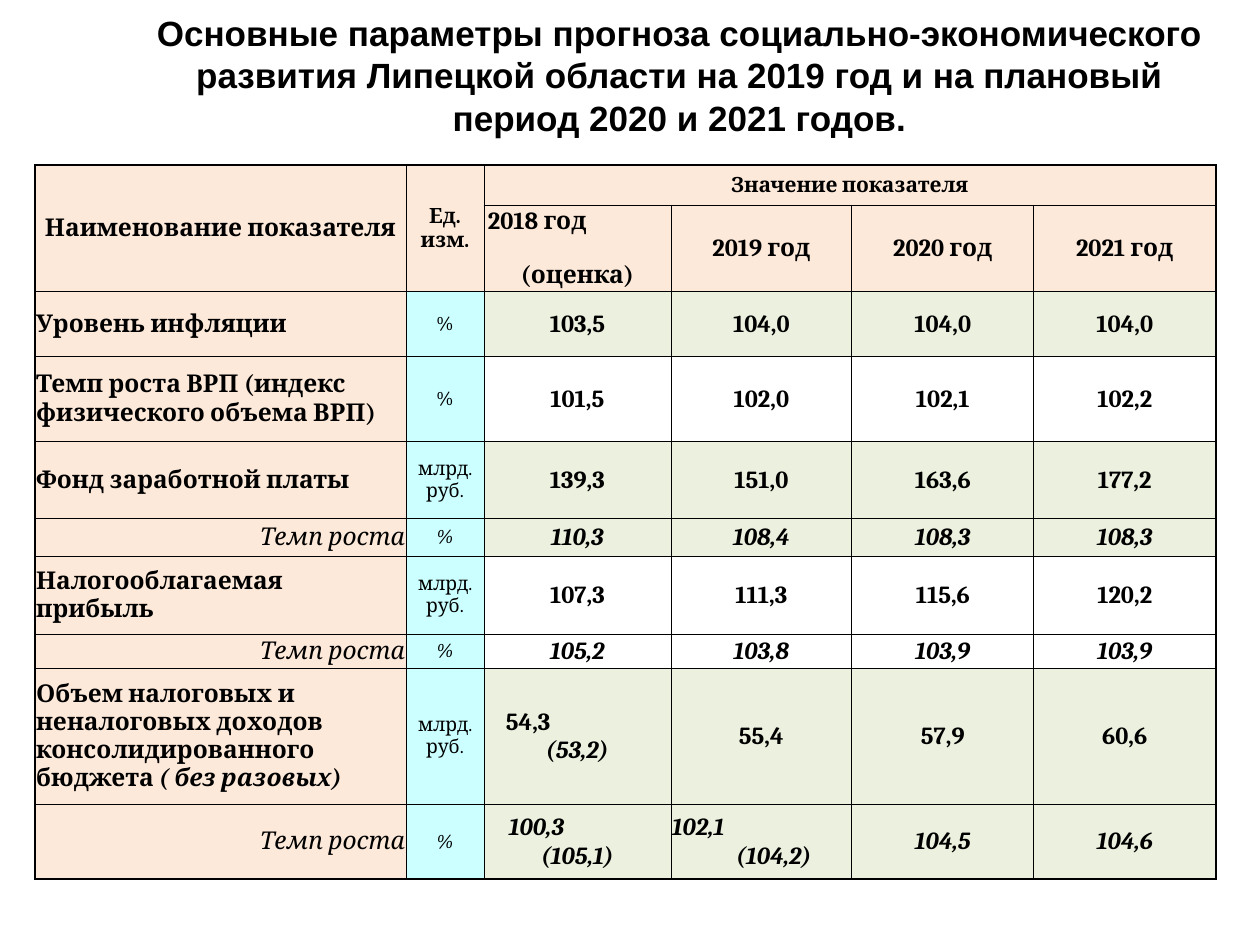
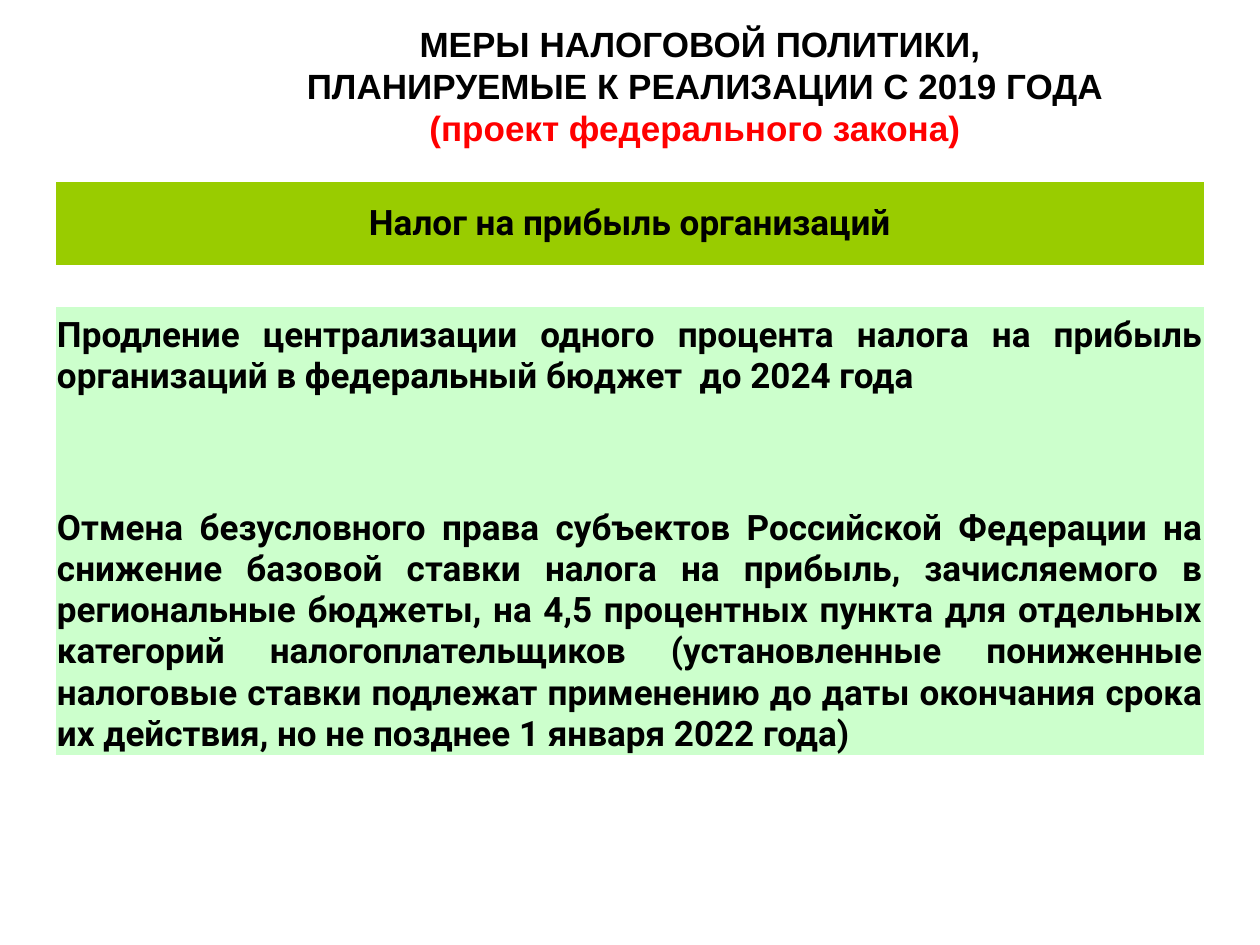
import pptx
import pptx.util
import pptx.dml.color
import pptx.enum.text
import pptx.oxml
import pptx.oxml.ns

PX = 914400 // 126
ALIGN = pptx.enum.text.PP_ALIGN
ANCHOR = pptx.enum.text.MSO_ANCHOR
BARE = "{2D5ABB26-0587-4C30-8999-92F81FD0307C}"
HUES = {"ink": "000000", "red": "FF0000", "peach": "FDE9D9", "cyan": "CCFFFF",
        "sage": "EBF1DE", "white": "FFFFFF", "lime": "99CC00", "mint": "CCFFCC"}


def tint(name):
    return pptx.dml.color.RGBColor.from_string(HUES[name])


def write(frame, text, size=14, font="Cambria", bold=True, ital=False, hue="ink",
          align=ALIGN.CENTER, left=0, right=0, before=0, join=False):
    """Add a paragraph, or with join a run in the last one; left and right are px."""
    para = frame.paragraphs[-1]
    if not join:
        if para.runs:
            para = frame.add_paragraph()
        para.alignment = align
        para.space_before = pptx.util.Pt(before)
        props = para._p.get_or_add_pPr()
        props.set("marL", str(left * PX))
        props.set("marR", str(right * PX))
        props.set("indent", "0")
    run = para.add_run()
    run.text = text
    run.font.size = pptx.util.Pt(size)
    run.font.name = font
    run.font.bold = bold
    run.font.italic = ital
    run.font.color.rgb = tint(hue)


class Deck:
    """Holds the shared style and the slide being built."""

    def __init__(self):
        self.file = pptx.Presentation()
        self.file.slide_width = pptx.util.Inches(10)
        self.file.slide_height = pptx.util.Inches(7.5)

    def page(self):
        self.slide = self.file.slides.add_slide(self.file.slide_layouts[6])

    def title(self, box, *lines):
        """Each line is a text and its format."""
        shape = self.slide.shapes.add_textbox(*(n * PX for n in box))
        frame = shape.text_frame
        frame.word_wrap = True
        frame.vertical_anchor = ANCHOR.MIDDLE
        for text, form in lines:
            write(frame, text, size=20, font="Arial", **form)

    def table(self, left, top, cols, rows):
        frame = self.slide.shapes.add_table(
            len(rows), len(cols), left * PX, top * PX, sum(cols) * PX, sum(rows) * PX)
        frame.element.find(".//" + pptx.oxml.ns.qn("a:tableStyleId")).text = BARE
        grid = frame.table
        grid.first_row = grid.horz_banding = False
        for col, width in zip(grid.columns, cols):
            col.width = width * PX
        for row, high in zip(grid.rows, rows):
            row.height = high * PX
        for cell in grid.iter_cells():
            cell.margin_left = cell.margin_right = cell.margin_top = PX
            cell.margin_bottom = 0
            cell.vertical_anchor = ANCHOR.MIDDLE
        return grid

    def fill(self, cell, hue):
        cell.fill.solid()
        cell.fill.fore_color.rgb = tint(hue)

    def rule(self, grid):
        """Draw thin lines inside the table and a thicker frame around it."""
        tall, wide = len(grid.rows), len(grid.columns)
        for r in range(tall):
            for c in range(wide):
                cell = grid.cell(r, c)
                edges = {"L": c == 0, "R": c + cell.span_width == wide,
                         "T": r == 0, "B": r + cell.span_height == tall}
                props = cell._tc.get_or_add_tcPr()
                for spot, (side, outer) in enumerate(edges.items()):
                    props.insert(spot, pptx.oxml.parse_xml(
                        f'<a:ln{side} {pptx.oxml.ns.nsdecls("a")} w="{12700 if outer else 6350}">'
                        f'<a:solidFill><a:srgbClr val="{HUES["ink"]}"/></a:solidFill>'
                        f'</a:ln{side}>'))


GROWTH = "Темп роста"
MONEY = "млрд. руб."
# Name, unit, row fill, values for 2018 to 2021
DATA = [
    ("Уровень инфляции", "%", "sage", "103,5 104,0 104,0 104,0"),
    ("Темп роста ВРП (индекс физического объема ВРП)", "%", "white", "101,5 102,0 102,1 102,2"),
    ("Фонд заработной платы", MONEY, "sage", "139,3 151,0 163,6 177,2"),
    (GROWTH, "%", "sage", "110,3 108,4 108,3 108,3"),
    ("Налогооблагаемая прибыль", MONEY, "white", "107,3 111,3 115,6 120,2"),
    (GROWTH, "%", "white", "105,2 103,8 103,9 103,9"),
    ("Объем налоговых и неналоговых доходов консолидированного бюджета", MONEY, "sage",
     "54,3/(53,2) 55,4 57,9 60,6"),
    (GROWTH, "%", "sage", "100,3/(105,1) 102,1/(104,2) 104,5 104,6"),
]
# Left indents of the two lines in a split value
SHIFT = {"54,3": (21, 0), "100,3": (24, 0), "102,1": (0, 25)}


def params(deck):
    deck.page()
    deck.title((124, 15, 1111, 120), (
        "Основные параметры прогноза социально-экономического развития Липецкой области "
        "на 2019 год и на плановый период 2020 и 2021 годов.", {}))
    grid = deck.table(35, 165, [371, 78, 187, 181, 182, 182],
                      [40, 86, 65, 85, 77, 38, 78, 34, 136, 75])
    for a, b in [((0, 0), (1, 0)), ((0, 1), (1, 1)), ((0, 2), (0, 5))]:
        grid.cell(*a).merge(grid.cell(*b))
    for r in range(2):
        for c in range(6):
            deck.fill(grid.cell(r, c), "peach")
    for c, (text, size) in enumerate([("Наименование показателя", 14), ("Ед. изм.", 12),
                                      ("Значение показателя", 12)]):
        write(grid.cell(0, c).text_frame, text, size=size)
    first = grid.cell(1, 2).text_frame
    write(first, "2018 год", align=ALIGN.LEFT, left=3)
    write(first, "(оценка)", before=15)
    for c, year in enumerate((2019, 2020, 2021), 3):
        write(grid.cell(1, c).text_frame, f"{year} год")

    for r, (name, unit, hue, nums) in enumerate(DATA, 2):
        rate = name == GROWTH
        for c, shade in enumerate(["peach", "cyan"] + [hue] * 4):
            deck.fill(grid.cell(r, c), shade)
        write(grid.cell(r, 0).text_frame, name, bold=not rate, ital=rate,
              align=ALIGN.RIGHT if rate else ALIGN.LEFT)
        write(grid.cell(r, 1).text_frame, unit, size=11, bold=False, ital=rate)
        for c, num in enumerate(nums.split(), 2):
            frame = grid.cell(r, c).text_frame
            main, _, note = num.partition("/")
            if note:
                lead, inset = SHIFT[main]
                write(frame, main, ital=rate, align=ALIGN.LEFT, left=lead)
                write(frame, note, ital=True, left=inset)
            else:
                write(frame, main, ital=rate)
    write(grid.cell(8, 0).text_frame, " ( без разовых)", ital=True, join=True)
    deck.rule(grid)


def policy(deck):
    deck.page()
    deck.title((174, 16, 1062, 139),
               ("МЕРЫ НАЛОГОВОЙ ПОЛИТИКИ,", {"right": 10}),
               ("ПЛАНИРУЕМЫЕ К РЕАЛИЗАЦИИ С 2019 ГОДА", {}),
               ("(проект федерального закона)", {"right": 20, "hue": "red"}))
    grid = deck.table(56, 182, [563, 25, 560], [83, 42, 90, 49, 309])
    hues = ["lime", None, "mint", "mint", "mint"]
    texts = {
        0: "Налог на прибыль организаций",
        2: "Продление централизации одного процента налога на прибыль организаций "
           "в федеральный бюджет  до 2024 года",
        4: "Отмена безусловного права субъектов Российской Федерации на снижение базовой "
           "ставки налога на прибыль, зачисляемого в региональные бюджеты, на 4,5 процентных "
           "пункта для отдельных категорий налогоплательщиков (установленные пониженные "
           "налоговые ставки подлежат применению до даты окончания срока их действия, "
           "но не позднее 1 января 2022 года)",
    }
    for r, hue in enumerate(hues):
        cell = grid.cell(r, 0)
        if r != 3:
            cell.merge(grid.cell(r, 2))
        if hue:
            for c in range(3):
                deck.fill(grid.cell(r, c), hue)
        if r in texts:
            write(cell.text_frame, texts[r], size=20, font="Roboto",
                  align=ALIGN.JUSTIFY if r else ALIGN.CENTER)
        if r:
            cell.vertical_anchor = ANCHOR.BOTTOM


def main():
    deck = Deck()
    params(deck)
    policy(deck)
    deck.file.save("out.pptx")


if __name__ == "__main__":
    main()
